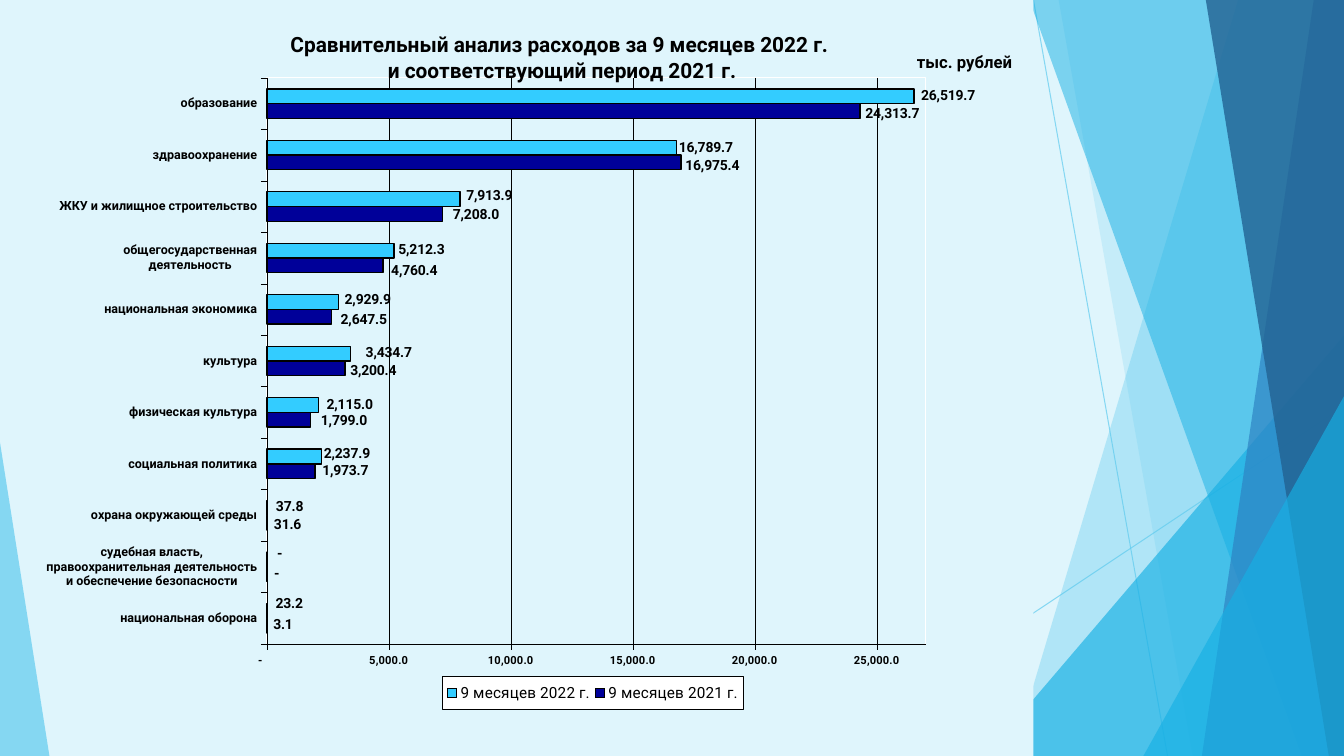
from copy import deepcopy
from dataclasses import dataclass
from typing import Optional

from lxml.etree import SubElement
from pptx import Presentation
from pptx.chart.chart import Chart
from pptx.chart.data import CategoryChartData
from pptx.dml.color import RGBColor
from pptx.enum.chart import XL_CHART_TYPE, XL_LABEL_POSITION, XL_LEGEND_POSITION, XL_TICK_LABEL_POSITION, XL_TICK_MARK
from pptx.enum.shapes import MSO_CONNECTOR, MSO_SHAPE
from pptx.oxml import parse_xml
from pptx.oxml.ns import nsdecls, qn
from pptx.util import Inches, Pt

COLS, ROWS = 1333, 750
CELL = Inches(0.01)


@dataclass(frozen=True)
class Theme:
    font: str = "Roboto"
    page: str = "DFF5FC"
    ink: str = "000000"
    white: str = "FFFFFF"
    sky: str = "5FCBEF"
    aqua: str = "17B0E4"
    blue: str = "2E83C3"
    deep: str = "226292"
    navy: str = "000099"
    cyan: str = "33CCFF"
    title: float = 15
    unit: float = 12
    legend: float = 11
    label: float = 10
    group: float = 9
    scale: float = 8
    hair: float = 0.25
    edge: float = 1
    ray: float = 0.75


THEME = Theme()


@dataclass(frozen=True)
class Ray:
    start: tuple[int, int]
    end: tuple[int, int]


@dataclass(frozen=True)
class Shard:
    top: int
    foot: int
    color: str
    alpha: int


@dataclass(frozen=True)
class Peak:
    left: int
    top: int
    width: int
    tip: float
    color: str
    alpha: int


@dataclass(frozen=True)
class Year:
    name: str
    color: str
    sums: tuple[float, ...]
    shifts: tuple[Optional[tuple[int, int]], ...]


RAYS = (Ray((1025, 0), (1158, ROWS)), Ray((COLS, 403), (812, ROWS)))
SHARDS = (
    Shard(1228, 1004, THEME.sky, 36),
    Shard(1050, 1183, THEME.sky, 20),
    Peak(977, 333, 356, 1, THEME.aqua, 66),
    Shard(1021, 1291, THEME.aqua, 50),
    Shard(1303, 1192, THEME.blue, 70),
    Shard(1196, 1318, THEME.deep, 80),
    Peak(1134, 393, 199, 1, THEME.aqua, 66),
    Peak(0, 439, 49, 0, THEME.sky, 70),
)
GROUPS = (
    "национальная оборона",
    "судебная власть, правоохранительная деятельность и обеспечение безопасности",
    "охрана окружающей среды",
    "социальная политика",
    "физическая культура",
    "культура",
    "национальная экономика",
    "общегосударственная деятельность",
    "ЖКУ и жилищное строительство",
    "здравоохранение",
    "образование",
)
YEARS = (
    Year("9 месяцев 2021 г.", THEME.navy,
         (3.1, 0, 31.6, 1973.7, 1799, 3200.4, 2647.5, 4760.4, 7208, 16975.4, 24313.7),
         ((-1, -1), (0, -1), (-1, 3), None, (3, 1), (-2, 3), (2, 4), (1, 7), (3, 1), (-3, 5), (-2, 4))),
    Year("9 месяцев 2022 г.", THEME.cyan,
         (23.2, 0, 37.8, 2237.9, 2115, 3434.7, 2929.9, 5212.3, 7913.9, 16789.7, 26519.7),
         ((1, -9), (3, -7), (1, -1), (-5, -4), (1, 0), (8, -1), (-1, -3), (-3, -1), (-1, -5), (-5, 0), None)),
)
FORMAT = '_(* #,##0.0_);_(* \\(#,##0.0\\);_(* "-"??_);_(@_)'


def fade(node, alpha: int) -> None:
    for color in node.iter(qn("a:srgbClr")):
        SubElement(color, qn("a:alpha")).set("val", str(alpha * 1000))


def draw_ray(shapes, ray: Ray) -> None:
    line = shapes.add_connector(MSO_CONNECTOR.STRAIGHT, *(n * CELL for n in ray.start + ray.end))
    line.line.color.rgb = RGBColor.from_string(THEME.sky)
    line.line.width = Pt(THEME.ray)
    fade(line.line._ln, 70)
    SubElement(line._element.spPr, qn("a:effectLst"))


def draw_shard(shapes, part: Shard | Peak) -> None:
    if isinstance(part, Peak):
        shape = shapes.add_shape(MSO_SHAPE.ISOSCELES_TRIANGLE, part.left * CELL, part.top * CELL,
                                 part.width * CELL, (ROWS - part.top) * CELL)
        shape.adjustments[0] = part.tip
    else:
        pen = shapes.build_freeform(part.top, 0, scale=CELL)
        pen.add_line_segments(((COLS, 0), (COLS, ROWS), (part.foot, ROWS)), close=True)
        shape = pen.convert_to_shape()
    shape.shadow.inherit = False
    shape.fill.solid()
    shape.fill.fore_color.rgb = RGBColor.from_string(part.color)
    shape.line.fill.background()
    fade(shape._element.spPr, part.alpha)


def set_font(font, size: float, bold: bool = False) -> None:
    font.name = THEME.font
    font.size = Pt(size)
    font.bold = bold
    font.color.rgb = RGBColor.from_string(THEME.ink)


def set_line(line, width: float) -> None:
    line.color.rgb = RGBColor.from_string(THEME.ink)
    line.width = Pt(width)


def paint(node, fill: str, edge: Optional[str] = None) -> None:
    ink = f'<a:solidFill><a:srgbClr val="{edge}"/></a:solidFill>' if edge else "<a:noFill/>"
    style = parse_xml(f'<c:spPr {nsdecls("c", "a")}><a:solidFill><a:srgbClr val="{fill}"/></a:solidFill>'
                      f'<a:ln w="9525">{ink}</a:ln></c:spPr>')
    text = node.find(qn("c:txPr"))
    if text is None:
        node.append(style)
    else:
        text.addprevious(style)


def make_layout(fields: dict[str, str | int]):
    rows = "".join(f'<c:{key} val="{val / 1000 if isinstance(val, int) else val}"/>' for key, val in fields.items())
    return parse_xml(f'<c:layout {nsdecls("c")}><c:manualLayout>{rows}</c:manualLayout></c:layout>')


def place(node, before: str, *box: int) -> None:
    for old in node.findall(qn("c:layout")):
        node.remove(old)
    inner = {"layoutTarget": "inner"} if before == "c:barChart" else {}
    modes = {"xMode": "edge", "yMode": "edge"}
    node.find(qn(before)).addprevious(make_layout(inner | modes | dict(zip("xywh", box))))


def set_title(title, text: str, size: float, left: int, top: int) -> None:
    title.text_frame.text = text
    for row in title.text_frame.paragraphs:
        for run in row.runs:
            set_font(run.font, size, True)
    for body in title._element.iter(qn("a:bodyPr")):
        body.set("rot", "0")
        body.set("vert", "horz")
    place(title._element, "c:overlay", left, top)


def style_year(bars, year: Year) -> None:
    bars.format.fill.solid()
    bars.format.fill.fore_color.rgb = RGBColor.from_string(year.color)
    set_line(bars.format.line, THEME.edge)
    bars.invert_if_negative = False
    labels = bars.data_labels
    set_font(labels.font, THEME.label, True)
    labels.number_format = FORMAT
    labels.number_format_is_linked = False
    labels.position = XL_LABEL_POSITION.OUTSIDE_END
    labels.show_value = True
    base = labels._element
    parts = [part for part in base if part.tag != qn("c:showLeaderLines")]
    first = base[0]
    for index, shift in enumerate(year.shifts):
        if shift:
            point = parse_xml(f'<c:dLbl {nsdecls("c")}><c:idx val="{index}"/></c:dLbl>')
            point.append(make_layout(dict(zip("xy", shift))))
            point.extend([deepcopy(part) for part in parts])
            first.addprevious(point)


def style_axis(axis, size: float) -> None:
    axis.major_tick_mark = XL_TICK_MARK.OUTSIDE
    axis.minor_tick_mark = XL_TICK_MARK.NONE
    axis.tick_label_position = XL_TICK_LABEL_POSITION.LOW
    set_line(axis.format.line, THEME.hair)
    set_font(axis.tick_labels.font, size, True)


def style_chart(chart: Chart) -> None:
    set_font(chart.font, THEME.unit)
    paint(chart._chartSpace, THEME.page)
    set_title(chart.chart_title, "Сравнительный анализ расходов за 9 месяцев 2022 г. \n"
              "и соответствующий период 2021 г.", THEME.title, 239, 37)
    plot = chart.plots[0]
    plot.gap_width, plot.overlap, plot.vary_by_categories = 150, 0, False
    for bars, year in zip(plot.series, YEARS):
        style_year(bars, year)
    style_axis(chart.category_axis, THEME.group)
    scale = chart.value_axis
    style_axis(scale, THEME.scale)
    scale.minimum_scale, scale.maximum_scale, scale.major_unit = 0, 27000, 5000
    scale.has_major_gridlines = True
    set_line(scale.major_gridlines.format.line, THEME.hair)
    scale.tick_labels.number_format = FORMAT
    scale.tick_labels.number_format_is_linked = False
    set_title(scale.axis_title, "тыс. рублей", THEME.unit, 878, 63)
    area = chart._chartSpace.chart.plotArea
    place(area, "c:barChart", 218, 103, 672, 749)
    paint(area, THEME.page, THEME.white)
    chart.has_legend = True
    legend = chart.legend
    legend.position = XL_LEGEND_POSITION.RIGHT
    legend.include_in_layout = False
    set_font(legend.font, THEME.legend)
    place(legend._element, "c:overlay", 397, 895, 307, 43)
    paint(legend._element, THEME.white, THEME.ink)


def main() -> None:
    deck = Presentation()
    deck.slide_width, deck.slide_height = COLS * CELL, ROWS * CELL
    slide = deck.slides.add_slide(deck.slide_layouts[6])
    slide.background.fill.solid()
    slide.background.fill.fore_color.rgb = RGBColor.from_string(THEME.page)
    for ray in RAYS:
        draw_ray(slide.shapes, ray)
    for shard in SHARDS:
        draw_shard(slide.shapes, shard)
    data = CategoryChartData(number_format=FORMAT)
    data.categories = GROUPS
    for year in YEARS:
        data.add_series(year.name, year.sums)
    frame = slide.shapes.add_chart(XL_CHART_TYPE.BAR_CLUSTERED, 46 * CELL, 0, 979 * CELL, ROWS * CELL, data)
    style_chart(frame.chart)
    deck.save("out.pptx")


if __name__ == "__main__":
    main()
